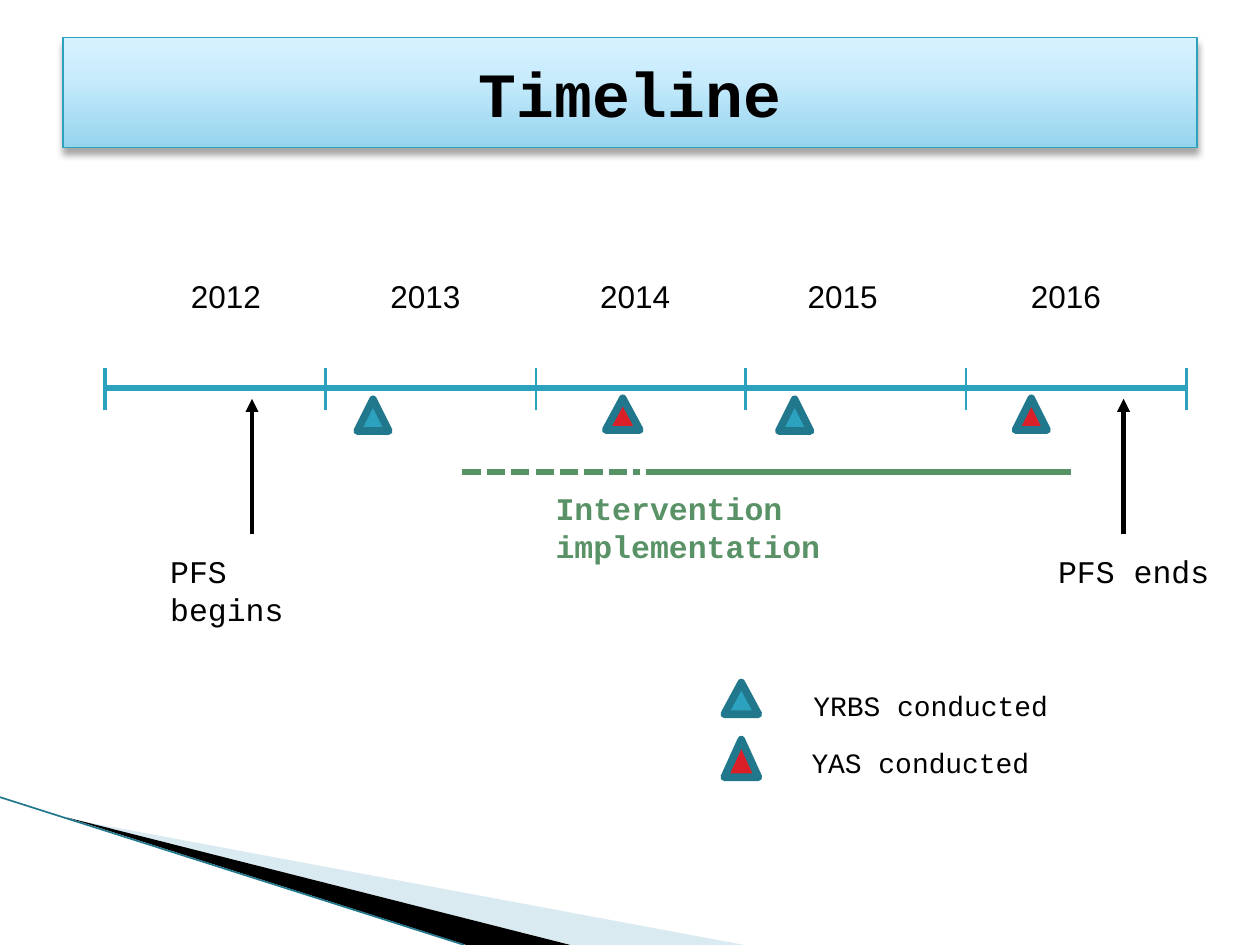
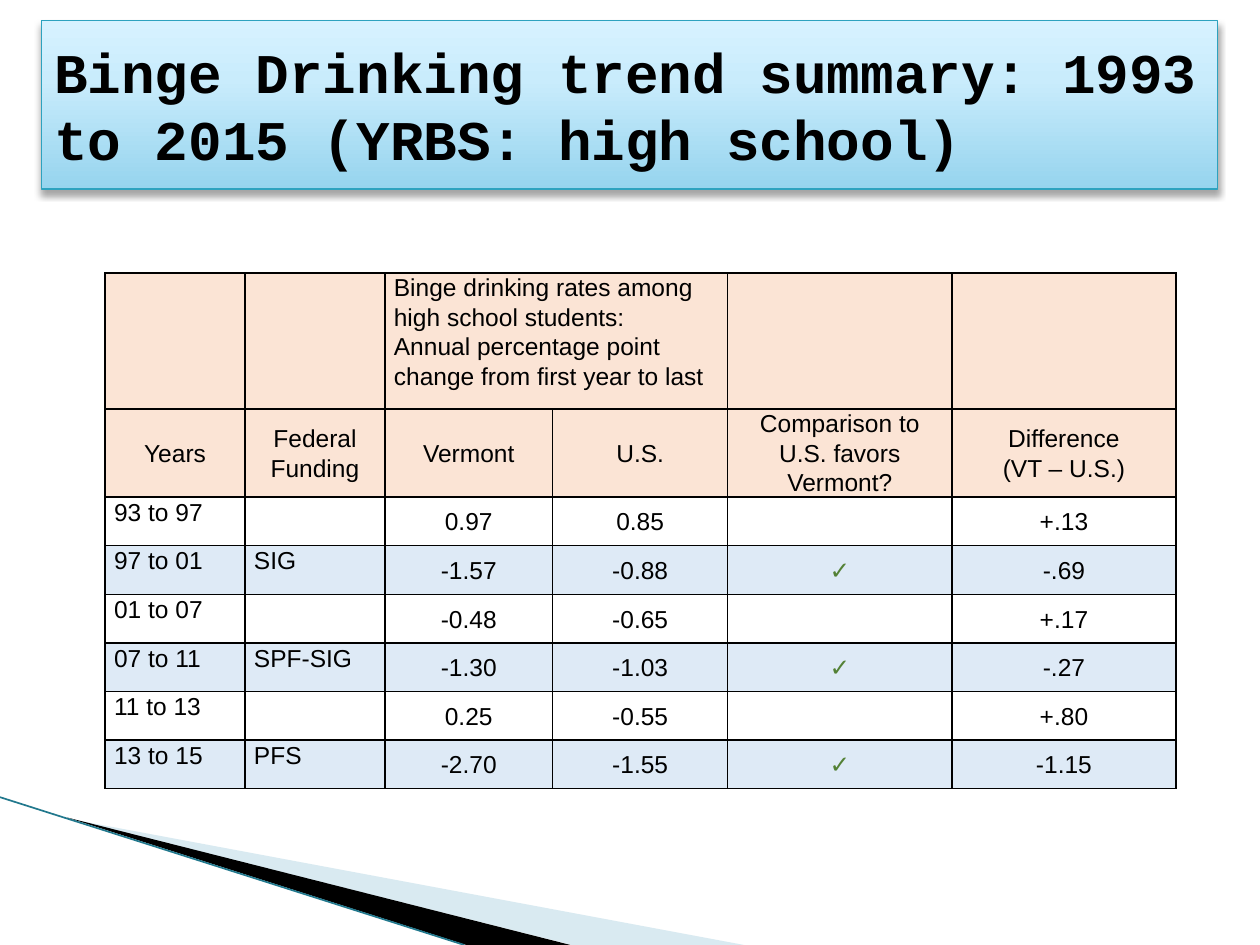
"""Build two slides: a project timeline and a trend summary table."""
from dataclasses import dataclass

from lxml import etree
from pptx import Presentation
from pptx.dml.color import RGBColor
from pptx.enum.dml import MSO_LINE
from pptx.enum.shapes import MSO_CONNECTOR, MSO_SHAPE
from pptx.enum.text import MSO_ANCHOR, PP_ALIGN
from pptx.oxml import parse_xml
from pptx.oxml.ns import nsdecls, qn
from pptx.util import Cm, Pt

STRAIGHT = MSO_CONNECTOR.STRAIGHT
RECTANGLE = MSO_SHAPE.RECTANGLE
TRIANGLE = MSO_SHAPE.ISOSCELES_TRIANGLE
SHORT_DASH = MSO_LINE.SQUARE_DOT
LEFT, CENTER = PP_ALIGN.LEFT, PP_ALIGN.CENTER
TOP, MIDDLE = MSO_ANCHOR.TOP, MSO_ANCHOR.MIDDLE


@dataclass(frozen=True)
class Theme:
    ink: str = "000000"
    teal: str = "2DA2BF"
    dark_teal: str = "21788D"
    pale_teal: str = "A0CBDC"
    red: str = "DA1F28"
    green: str = "5A9267"
    check: str = "538135"
    header: str = "FBE4D5"
    stripe: str = "DEEAF6"
    title_stops: tuple = ((0, "96D4EE"), (65, "C9ECFC"), (100, "D7F2FF"))
    mono: str = "Courier New"
    sans: str = "Arial"
    title_size: int = 36
    long_title_size: int = 32
    label_size: int = 18
    legend_size: int = 16
    table_size: int = 14


class Deck:
    def __init__(self, theme):
        self.theme = theme
        self.presentation = Presentation()
        self.presentation.slide_width = Cm(25.4)
        self.presentation.slide_height = Cm(19.05)
        self.slide = None

    def new_slide(self):
        layout = self.presentation.slide_layouts[6]
        self.slide = self.presentation.slides.add_slide(layout)
        self.wedge([(1.4, 16.51), (15, 19.05), (11.53, 19.05)], self.theme.pale_teal, 40)
        self.wedge([(1.35, 16.48), (11.5, 19.05), (9.4, 19.05)], self.theme.ink)
        self.line((0, 16.07), (9.36, 19.05), self.theme.dark_teal, 0.95)

    def wedge(self, points, color, opacity=100):
        start, *rest = [(Cm(x), Cm(y)) for x, y in points]
        builder = self.slide.shapes.build_freeform(*start)
        builder.add_line_segments(rest)
        wedge = builder.convert_to_shape()
        wedge.shadow.inherit = False
        wedge.fill.solid()
        wedge.fill.fore_color.rgb = RGBColor.from_string(color)
        wedge.line.fill.background()
        if opacity < 100:
            tint = wedge._element.spPr.find(qn("a:solidFill"))[0]
            etree.SubElement(tint, qn("a:alpha"), val=str(opacity * 1000))

    def line(self, start, end, color, width, dash=None, arrow=False):
        ends = [Cm(value) for value in (*start, *end)]
        connector = self.slide.shapes.add_connector(STRAIGHT, *ends)
        connector.line.color.rgb = RGBColor.from_string(color)
        connector.line.width = Pt(width)
        if dash:
            connector.line.dash_style = dash
        properties = connector._element.spPr
        if arrow:
            etree.SubElement(properties.find(qn("a:ln")), qn("a:tailEnd"), type="triangle")
        etree.SubElement(properties, qn("a:effectLst"))

    def shape(self, preset, box, fill, outline, width):
        shape = self.slide.shapes.add_shape(preset, *[Cm(value) for value in box])
        shape.shadow.inherit = False
        if fill:
            shape.fill.solid()
            shape.fill.fore_color.rgb = RGBColor.from_string(fill)
        shape.line.color.rgb = RGBColor.from_string(outline)
        shape.line.width = Pt(width)
        return shape

    def marker(self, box, fill):
        self.shape(TRIANGLE, box, fill, self.theme.dark_teal, 4.33)

    def set_text(self, frame, text, size, font, color=None, bold=False, align=LEFT, spacing=None):
        frame.text = text
        frame.word_wrap = True
        for paragraph in frame.paragraphs:
            paragraph.alignment = align
            paragraph.line_spacing = spacing
            for run in paragraph.runs:
                run.font.size = Pt(size)
                run.font.name = font
                run.font.bold = bold
                run.font.color.rgb = RGBColor.from_string(color or self.theme.ink)

    def title(self, text, box, size, align):
        band = self.shape(RECTANGLE, box, None, self.theme.teal, 0.75)
        stops = "".join(
            f'<a:gs pos="{position * 1000}"><a:srgbClr val="{color}"/></a:gs>'
            for position, color in self.theme.title_stops)
        gradient = parse_xml(
            f'<a:gradFill {nsdecls("a")} rotWithShape="1"><a:gsLst>{stops}</a:gsLst>'
            '<a:lin ang="16200000" scaled="0"/></a:gradFill>')
        shadow = parse_xml(
            f'<a:outerShdw {nsdecls("a")} blurRad="{Pt(4)}" dist="{Pt(3)}" dir="5400000" '
            'rotWithShape="0"><a:srgbClr val="000000"><a:alpha val="35000"/></a:srgbClr>'
            '</a:outerShdw>')
        properties = band._element.spPr
        properties.find(qn("a:ln")).addprevious(gradient)
        properties.find(qn("a:effectLst")).append(shadow)
        band.text_frame.vertical_anchor = MIDDLE
        self.set_text(band.text_frame, text, size, self.theme.mono, bold=True, align=align)

    def label(self, text, box, size, font, color=None, bold=False):
        label = self.slide.shapes.add_textbox(*[Cm(value) for value in box])
        self.set_text(label.text_frame, text, size, font, color, bold)

    def cell(self, cell, text, fill, align, anchor):
        cell.margin_left = cell.margin_right = Cm(0.18)
        cell.margin_top = cell.margin_bottom = 0
        cell.vertical_anchor = anchor
        is_check = text == "✓"
        self.set_text(cell.text_frame, text, self.theme.table_size, self.theme.sans,
                      self.theme.check if is_check else None, is_check, align, 1.07)
        for side in ("lnL", "lnR", "lnT", "lnB"):
            cell._tc.get_or_add_tcPr().append(parse_xml(
                f'<a:{side} {nsdecls("a")} w="{Pt(1)}"><a:solidFill>'
                f'<a:srgbClr val="{self.theme.ink}"/></a:solidFill></a:{side}>'))
        if fill:
            cell.fill.solid()
            cell.fill.fore_color.rgb = RGBColor.from_string(fill)
        else:
            cell.fill.background()

    def table(self, rows, left, top, widths, heights):
        frame = self.slide.shapes.add_table(
            len(rows), len(widths), Cm(left), Cm(top), Cm(sum(widths)), Cm(sum(heights)))
        table = frame.table
        table.first_row = table.horz_banding = False
        for column, width in zip(table.columns, widths):
            column.width = Cm(width)
        for row, height in zip(table.rows, heights):
            row.height = Cm(height)
        for r, texts in enumerate(rows):
            fill = self.theme.header if r < 2 else self.theme.stripe if r % 2 else None
            for c, text in enumerate(texts):
                centered = r == 1 or (r > 1 and c > 1)
                self.cell(table.cell(r, c), text, fill,
                          CENTER if centered else LEFT, MIDDLE if centered else TOP)
        return table


def build_timeline(deck):
    theme = deck.theme
    deck.new_slide()
    deck.title("Timeline", (1.27, 0.76, 22.86, 2.21), theme.title_size, CENTER)

    year_bounds = (2.12, 6.56, 10.8, 15.03, 19.47, 23.92)
    first, last = year_bounds[0], year_bounds[-1]
    deck.line((first, 7.82), (last, 7.82), theme.teal, 3)
    for x in year_bounds:
        deck.line((x, 7.41), (x, 8.26), theme.teal, 2 if x in (first, last) else 1.25)
    for year, x in enumerate((3.6, 7.62, 11.85, 16.03, 20.53), start=2012):
        deck.label(str(year), (x, 5.46, 2.11, 1.02), theme.label_size, theme.sans)

    deck.line((9.32, 9.52), (12.9, 9.52), theme.green, 3.5, dash=SHORT_DASH)
    deck.line((13.02, 9.52), (21.59, 9.52), theme.green, 3.5)
    deck.label("Intervention implementation", (10.95, 9.73, 10.36, 1.02),
               theme.label_size, theme.mono, theme.green, True)

    for x in (7.2, 15.7):
        deck.marker((x, 8.05, 0.64, 0.64), theme.teal)
    for x, width in ((12.21, 0.69), (20.47, 0.64)):
        deck.marker((x, 8.03, width, 0.64), theme.red)

    for milestone, arrow_x, text_x in (("PFS begins", 5.08, 3.18), ("PFS ends", 22.65, 21.08)):
        deck.line((arrow_x, 10.77), (arrow_x, 8.04), theme.ink, 2.5, arrow=True)
        deck.label(milestone, (text_x, 11, 4.01, 1.07), theme.label_size, theme.mono)

    legend = (("YRBS conducted", theme.teal, 13.76, 0.64, 16.15),
              ("YAS conducted", theme.red, 14.91, 0.76, 16.11))
    for survey, color, y, height, text_x in legend:
        deck.marker((14.6, y, 0.69, height), color)
        deck.label(survey, (text_x, y, 5.66, 0.94), theme.legend_size, theme.mono)


def build_trend_summary(deck):
    deck.new_slide()
    deck.title("Binge Drinking trend summary: 1993 to 2015 (YRBS: high school)",
               (0.84, 0.42, 23.71, 3.39), deck.theme.long_title_size, LEFT)
    rates_heading = ("Binge drinking rates among high school students:\n"
                     "Annual percentage point change from first year to last")
    rows = [
        ("", "", rates_heading, "", "", ""),
        ("Years", "Federal Funding", "Vermont", "U.S.",
         "Comparison to U.S. favors Vermont?", "Difference\n(VT – U.S.)"),
        ("93 to 97", "", "0.97", "0.85", "", "+.13"),
        ("97 to 01", "SIG", "-1.57", "-0.88", "✓", "-.69"),
        ("01 to 07", "", "-0.48", "-0.65", "", "+.17"),
        ("07 to 11", "SPF-SIG", "-1.30", "-1.03", "✓", "-.27"),
        ("11 to 13", "", "0.25", "-0.55", "", "+.80"),
        ("13 to 15", "PFS", "-2.70", "-1.55", "✓", "-1.15"),
    ]
    widths = (2.82, 2.82, 3.38, 3.53, 4.52, 4.52)
    heights = (2.74, 1.78) + (0.98,) * 6
    trends = deck.table(rows, 2.12, 5.5, widths, heights)
    trends.cell(0, 2).merge(trends.cell(0, 3))


def main():
    deck = Deck(Theme())
    build_timeline(deck)
    build_trend_summary(deck)
    deck.presentation.save("out.pptx")


if __name__ == "__main__":
    main()
